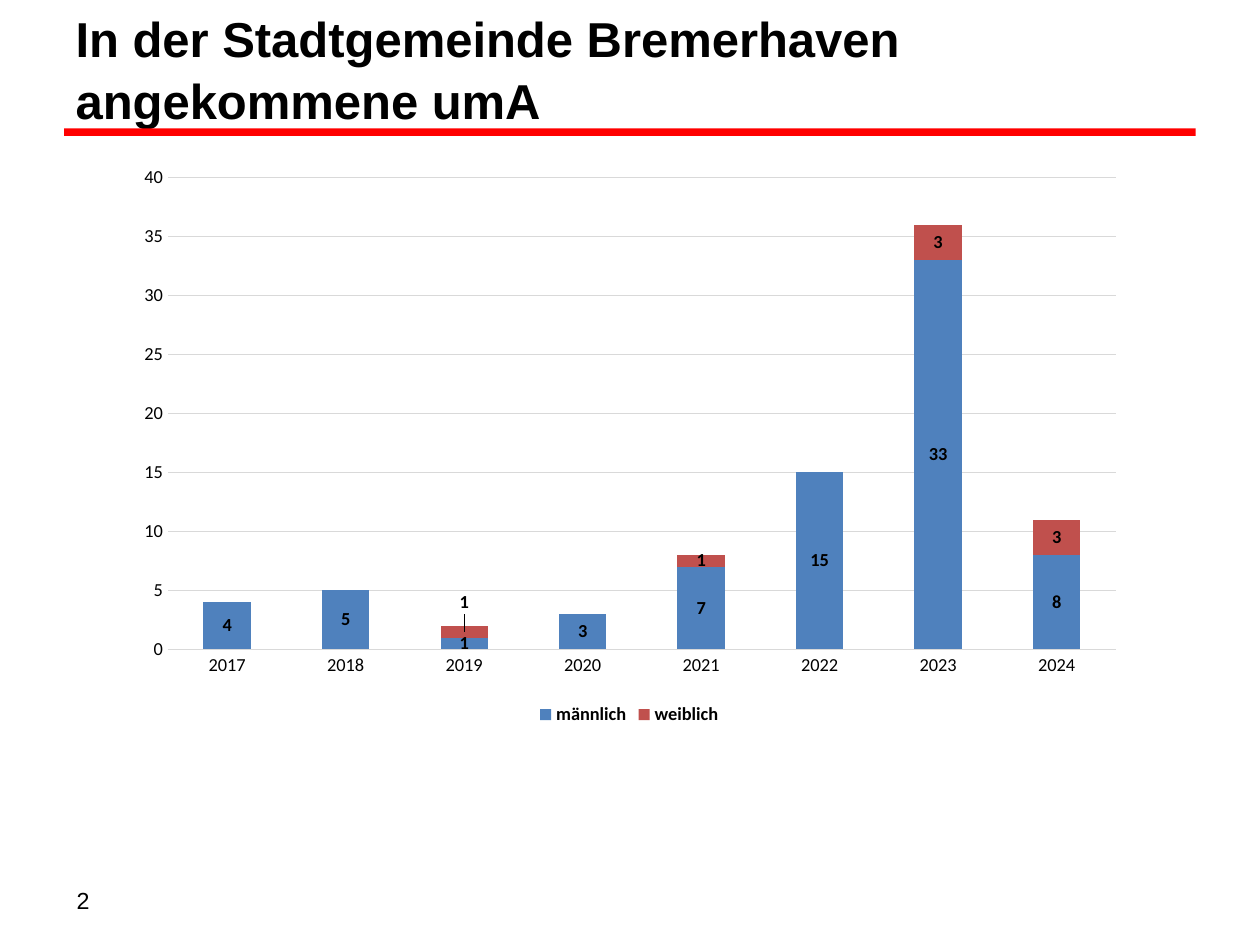
from lxml import etree
from pptx import Presentation
from pptx.chart.data import CategoryChartData
from pptx.dml.color import RGBColor
from pptx.enum.chart import XL_CHART_TYPE, XL_LABEL_POSITION, XL_LEGEND_POSITION, XL_TICK_MARK
from pptx.enum.shapes import MSO_SHAPE
from pptx.enum.text import MSO_ANCHOR, MSO_AUTO_SIZE, PP_ALIGN
from pptx.oxml.ns import qn
from pptx.util import Inches, Pt

STACKED = XL_CHART_TYPE.COLUMN_STACKED
CENTER = XL_LABEL_POSITION.CENTER
BOTTOM = XL_LEGEND_POSITION.BOTTOM
NO_TICK = XL_TICK_MARK.NONE
MIDDLE = MSO_ANCHOR.MIDDLE
LEFT = PP_ALIGN.LEFT

TITLE = "In der Stadtgemeinde Bremerhaven angekommene umA"
PAGE_NUMBER = "2"
YEARS = ["2017", "2018", "2019", "2020", "2021", "2022", "2023", "2024"]
SERIES = [
    ("männlich", "4F81BD", [4, 5, 1, 3, 7, 15, 33, 8]),
    ("weiblich", "C0504D", [None, None, 1, None, 1, None, 3, 3]),
]
RAISED_LABEL = ("weiblich", "2019", -0.05)
PLOT_LAYOUT = {"layoutTarget": "inner", "xMode": "edge", "yMode": "edge",
               "x": 0.044, "y": 0.039, "w": 0.937, "h": 0.82}
BLACK, RED, GRID = "000000", "FF0000", "D9D9D9"


def color(value):
    return RGBColor.from_string(value)


def inches(*values):
    return [Inches(value) for value in values]


def style_font(font, name, size, bold=False):
    font.name = name
    font.size = Pt(size)
    font.bold = bold
    font.color.rgb = color(BLACK)


def write(shape, text, size, bold=False):
    frame = shape.text_frame
    frame.word_wrap = True
    frame.auto_size = MSO_AUTO_SIZE.NONE
    frame.vertical_anchor = MIDDLE
    para = frame.paragraphs[0]
    para.alignment = LEFT
    span = para.add_run()
    span.text = text
    style_font(span.font, "Arial", size, bold)
    return para


def style_line(line):
    line.color.rgb = color(GRID)
    line.width = Pt(0.75)


def make_layout(settings):
    layout = etree.Element(qn("c:layout"))
    manual = etree.SubElement(layout, qn("c:manualLayout"))
    for key, value in settings.items():
        etree.SubElement(manual, qn("c:" + key)).set("val", str(value))
    return layout


def add_title(page):
    title = page.shapes.title
    title.left, title.top, title.width, title.height = inches(0.5, 0.3, 9, 0.47)
    write(title, TITLE, 28, True).line_spacing = 1.05


def add_rule(page):
    rule = page.shapes.add_shape(MSO_SHAPE.RECTANGLE, *inches(0.51, 1.02, 8.98, 0.06))
    rule.shadow.inherit = False
    rule.fill.solid()
    rule.fill.fore_color.rgb = color(RED)
    rule.line.fill.background()


def add_arrivals_chart(page):
    data = CategoryChartData()
    data.categories = YEARS
    for name, _, values in SERIES:
        data.add_series(name, values)
    chart = page.shapes.add_chart(STACKED, *inches(0.98, 1.23, 8.03, 4.57), data).chart
    style_font(chart.font, "Calibri", 10)
    chart.has_title = False
    chart.has_legend = True
    chart.legend.position = BOTTOM
    chart.legend.include_in_layout = False
    style_font(chart.legend.font, "Calibri", 10.5, True)

    years, counts = chart.category_axis, chart.value_axis
    for axis in (years, counts):
        axis.major_tick_mark = axis.minor_tick_mark = NO_TICK
        style_font(axis.tick_labels.font, "Calibri", 10.5)
    style_line(years.format.line)
    counts.format.line.fill.background()
    counts.minimum_scale, counts.maximum_scale, counts.major_unit = 0, 40, 5
    counts.has_major_gridlines = True
    style_line(counts.major_gridlines.format.line)

    plot = chart.plots[0]
    plot.gap_width, plot.overlap = 150, 100
    plot.vary_by_categories = False
    for series, (name, fill, _) in zip(plot.series, SERIES):
        series.format.fill.solid()
        series.format.fill.fore_color.rgb = color(fill)
        labels = series.data_labels
        labels.show_value = True
        labels.position = CENTER
        style_font(labels.font, "Calibri", 10.5, True)
        if name == RAISED_LABEL[0]:
            label = series.points[YEARS.index(RAISED_LABEL[1])].data_label
            label.position = CENTER
            style_font(label.font, "Calibri", 10.5, True)
            index = next(series._element.iter(qn("c:dLbl"))).find(qn("c:idx"))
            index.addnext(make_layout({"x": 0, "y": RAISED_LABEL[2]}))

    area = next(chart._chartSpace.iter(qn("c:plotArea")))
    for layout in area.findall(qn("c:layout")):
        area.remove(layout)
    area.insert(0, make_layout(PLOT_LAYOUT))


def main():
    deck = Presentation()
    deck.slide_width, deck.slide_height = inches(10, 7.5)
    page = deck.slides.add_slide(deck.slide_layouts[5])
    add_rule(page)
    write(page.shapes.add_textbox(*inches(0.51, 7, 1.95, 0.29)), PAGE_NUMBER, 13.3)
    add_title(page)
    add_arrivals_chart(page)
    deck.save("out.pptx")


if __name__ == "__main__":
    main()
